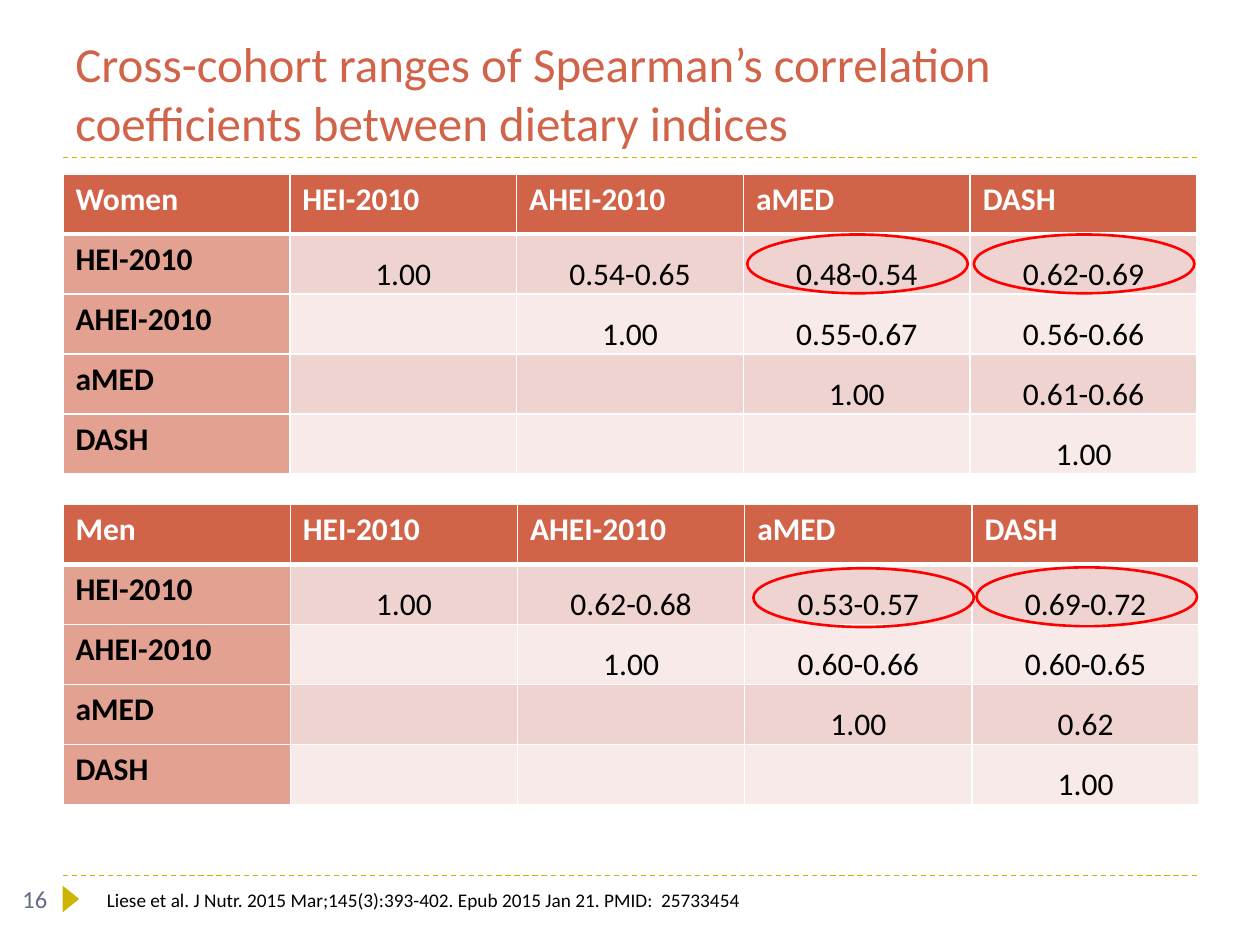
from dataclasses import dataclass

from lxml import etree
from pptx import Presentation
from pptx import util as u
from pptx.dml.color import RGBColor
from pptx.enum import dml, shapes, text
from pptx.oxml import ns

Pt = u.Pt


@dataclass(frozen=True)
class Theme:
    """Colours, font and type sizes of the slide."""
    font: str = "Calibri"
    accent: str = "D16349"
    rule: str = "CCB400"
    number: str = "646B86"
    ink: str = "000000"
    white: str = "FFFFFF"
    label_fill: str = "E3A192"
    bands: tuple = ("EED3D0", "F7EAE9")
    ring: str = "FF0000"
    title_size: int = 28
    table_size: int = 18
    number_size: int = 14
    citation_size: int = 11


THEME = Theme()
INDICES = ["HEI-2010", "AHEI-2010", "aMED", "DASH"]
WOMEN = [["1.00", "0.54-0.65", "0.48-0.54", "0.62-0.69"],
         ["1.00", "0.55-0.67", "0.56-0.66"],
         ["1.00", "0.61-0.66"],
         ["1.00"]]
MEN = [["1.00", "0.62-0.68", "0.53-0.57", "0.69-0.72"],
       ["1.00", "0.60-0.66", "0.60-0.65"],
       ["1.00", "0.62"],
       ["1.00"]]
RINGS = [(427, 134), (556.5, 134), (430.5, 324.7), (558, 324.2)]
ROW_HEIGHT = 34.29


def style(paragraph, size, color, bold=False):
    """Set the font of a whole paragraph."""
    font = paragraph.font
    font.name, font.size, font.bold = THEME.font, Pt(size), bold
    font.color.rgb = RGBColor.from_string(color)


def add_text(slide, box, words, size, color, anchor=text.MSO_ANCHOR.TOP):
    """Add a wrapped text box with one paragraph."""
    frame = slide.shapes.add_textbox(*map(Pt, box)).text_frame
    frame.word_wrap = True
    frame.vertical_anchor = anchor
    frame.text = words
    style(frame.paragraphs[0], size, color)


def add_rule(slide, top):
    """Add a dashed rule across the content width."""
    rule = slide.shapes.add_connector(
        shapes.MSO_CONNECTOR.STRAIGHT, Pt(36), Pt(top), Pt(684), Pt(top))
    rule.line.color.rgb = RGBColor.from_string(THEME.rule)
    rule.line.width = Pt(0.75)
    rule.line.dash_style = dml.MSO_LINE.DASH
    etree.SubElement(rule._element.spPr, ns.qn("a:effectLst"))


def add_marker(slide):
    """Add the triangle that points from the slide number to the citation."""
    marker = slide.shapes.add_shape(
        shapes.MSO_SHAPE.ISOSCELES_TRIANGLE, Pt(33), Pt(509), Pt(15.1), Pt(9.4))
    marker.rotation = 90
    marker.shadow.inherit = False
    marker.fill.solid()
    marker.fill.fore_color.rgb = RGBColor.from_string(THEME.rule)
    marker.line.fill.background()


def add_ring(slide, left, top):
    """Add an unfilled ellipse around a highlighted range."""
    ring = slide.shapes.add_shape(
        shapes.MSO_SHAPE.OVAL, Pt(left), Pt(top), Pt(126), Pt(33.6))
    ring.shadow.inherit = False
    ring.fill.background()
    ring.line.color.rgb = RGBColor.from_string(THEME.ring)
    ring.line.width = Pt(1.5)


def set_borders(cell, top, bottom):
    """Give a cell white borders, with the top and bottom widths in points."""
    properties = cell._tc.get_or_add_tcPr()
    for side, width in {"L": 1, "R": 1, "T": top, "B": bottom}.items():
        border = etree.SubElement(properties, ns.qn(f"a:ln{side}"), w=str(Pt(width)))
        fill = etree.SubElement(border, ns.qn("a:solidFill"))
        etree.SubElement(fill, ns.qn("a:srgbClr"), val=THEME.white)


def fill_cell(cell, words, row, column):
    """Write and format one cell as heading, index label or value."""
    set_borders(cell, 3 if row == 1 else 1, 3 if row == 0 else 1)
    is_value = row > 0 and column > 0
    if row == 0:
        fill, color = THEME.accent, THEME.white
    else:
        fill = THEME.bands[(row - 1) % 2] if is_value else THEME.label_fill
        color = THEME.ink
    cell.fill.solid()
    cell.fill.fore_color.rgb = RGBColor.from_string(fill)
    cell.text = words
    paragraph = cell.text_frame.paragraphs[0]
    if is_value:
        cell.vertical_anchor = text.MSO_ANCHOR.BOTTOM
        cell.margin_left = cell.margin_right = Pt(5.4)
        cell.margin_top = cell.margin_bottom = 0
        paragraph.alignment = text.PP_ALIGN.CENTER
    style(paragraph, THEME.table_size, color, bold=not is_value)


def add_correlations(slide, group, ranges, top, width):
    """Add an upper-triangular correlation table for one group."""
    count = len(INDICES) + 1
    table = slide.shapes.add_table(
        count, count, Pt(36), Pt(top), Pt(width), Pt(ROW_HEIGHT * count)).table
    table.horz_banding = False
    table.first_col = True
    for column in table.columns:
        column.width = Pt(width / count)
    rows = [[group] + INDICES]
    for index, values in zip(INDICES, ranges):
        rows.append([index] + [""] * (len(INDICES) - len(values)) + values)
    for r, row in enumerate(rows):
        table.rows[r].height = Pt(ROW_HEIGHT)
        for c, words in enumerate(row):
            fill_cell(table.cell(r, c), words, r, c)


def main():
    """Build and save the slide."""
    deck = Presentation()
    deck.slide_width, deck.slide_height = Pt(720), Pt(540)
    slide = deck.slides.add_slide(deck.slide_layouts[6])
    for top in (500.4, 90):
        add_rule(slide, top)
    add_marker(slide)
    add_text(slide, (36, 12.24, 648, 77.76),
             "Cross-cohort ranges of Spearman’s correlation \v"
             "coefficients between dietary indices",
             THEME.title_size, THEME.accent, text.MSO_ANCHOR.BOTTOM)
    add_correlations(slide, "Women", WOMEN, 99.36, 648)
    add_text(slide, (5.76, 501.84, 156, 28.8), "16", THEME.number_size, THEME.number)
    add_correlations(slide, "Men", MEN, 288.25, 649.4)
    for left, top in RINGS:
        add_ring(slide, left, top)
    add_text(slide, (54, 504, 402, 20.6),
             "Liese et al. J Nutr. 2015 Mar;145(3):393-402. "
             "Epub 2015 Jan 21. PMID:  25733454",
             THEME.citation_size, THEME.ink)
    deck.save("out.pptx")


if __name__ == "__main__":
    main()
